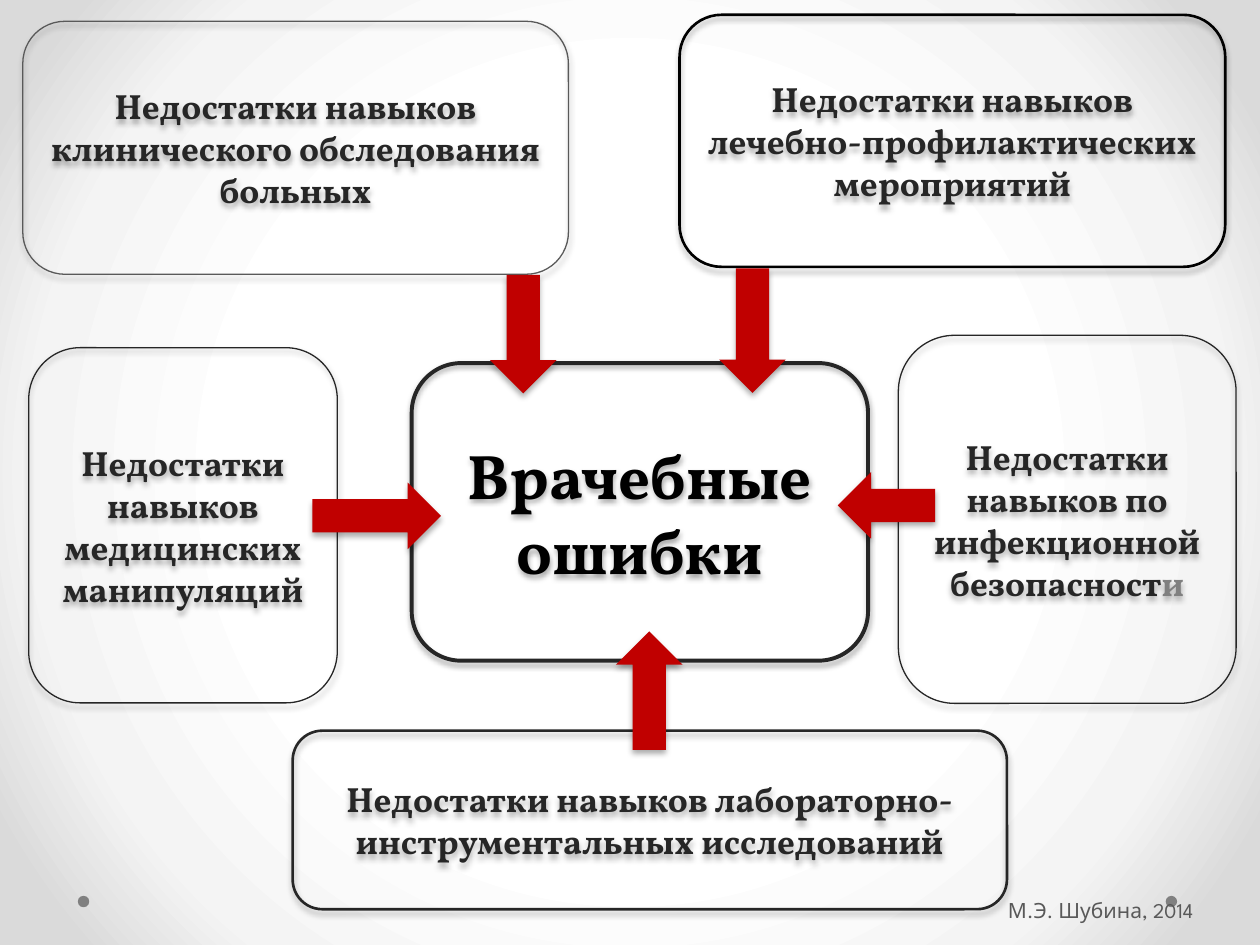
from lxml import etree
from pptx import Presentation
from pptx.dml.color import RGBColor
from pptx.enum.shapes import MSO_SHAPE
from pptx.enum.text import MSO_ANCHOR, PP_ALIGN
from pptx.oxml import parse_xml
from pptx.oxml.ns import nsdecls, qn
from pptx.util import Cm, Pt

ROUNDED = MSO_SHAPE.ROUNDED_RECTANGLE
OVAL = MSO_SHAPE.OVAL
DOWN, UP = MSO_SHAPE.DOWN_ARROW, MSO_SHAPE.UP_ARROW
RIGHT, LEFT = MSO_SHAPE.RIGHT_ARROW, MSO_SHAPE.LEFT_ARROW
MIDDLE = MSO_ANCHOR.MIDDLE
CENTER, ALIGN_LEFT = PP_ALIGN.CENTER, PP_ALIGN.LEFT

THEME = {
    "black": "000000", "dark": "262626", "grey": "595959", "dot": "808080",
    "arrow": "C00000",
    "background": [(0, "FFFFFF"), (50, "FFFFFF"), (76, "F4F4F4"), (92, "DADADA"), (100, "DADADA")],
    "heading_font": "Vollkorn", "body_font": "League Spartan",
    "center_size": 36, "box_size": 20, "credit_size": 12,
    # opacity %, blur pt, distance pt
    "center_shadow": (35, 3.1, 1.8), "shadow": (32, 3.5, 2.2),
}

# Positions are left, top, width, height in centimetres
CENTER_BOX = ("Врачебные ошибки", (8.3, 7.32, 9.2, 6), "dark", 2.25)
CAUSES = [
    ("Недостатки навыков клинического обследования больных", (0.46, 0.43, 11, 5.1), "grey", 0.75),
    ("Недостатки навыков лечебно-профилактических мероприятий", (13.7, 0.3, 11, 5.08), "black", 1.5),
    ("Недостатки навыков лабораторно-инструментальных исследований", (5.9, 14.73, 14.4, 3.6), "dark", 1.5),
    ("Недостатки навыков медицинских манипуляций", (0.58, 7.01, 6.22, 7.16), "dark", 0.75),
    ("Недостатки навыков по инфекционной безопасност", (18.11, 6.76, 6.81, 7.42), "dark", 0.75),
]
GREY_ENDING = "и"  # last letter of the last cause

ARROW_WIDTH = 1.34
# direction, left, top, length
ARROWS = [
    (DOWN, 9.88, 5.54, 2.39),
    (UP, 12.42, 12.73, 2.39),
    (RIGHT, 6.3, 9.73, 2.59),
    (LEFT, 16.89, 9.52, 1.96),
    (DOWN, 14.5, 5.41, 2.51),
]

DOT_SIZE, DOT_TOP, DOT_LEFTS = 0.23, 18.06, (23.5, 1.57)
CREDIT = ("М.Э. Шубина, 2014", (20.09, 17.83, 5.08, 1.02))


def color(name):
    return RGBColor.from_string(THEME[name])


def set_background(slide):
    stops = "".join(
        f'<a:gs pos="{position * 1000}"><a:srgbClr val="{value}"/></a:gs>'
        for position, value in THEME["background"])
    slide.background.fill.solid()
    properties = slide.background._cSld.bg.bgPr
    gradient = parse_xml(
        f'<a:gradFill {nsdecls("a")} rotWithShape="1"><a:gsLst>{stops}</a:gsLst>'
        '<a:path path="circle"><a:fillToRect l="50000" t="50000" r="50000" b="50000"/>'
        '</a:path></a:gradFill>')
    properties.replace(properties.find(qn("a:solidFill")), gradient)


def add_shape(slide, kind, position, fill=None, shadow=None):
    shape = slide.shapes.add_shape(kind, *map(Cm, position))
    shape.line.fill.background()
    if fill:
        shape.fill.solid()
        shape.fill.fore_color.rgb = color(fill)
    else:
        shape.fill.background()
    shape.shadow.inherit = False
    if shadow:
        opacity, blur, distance = THEME[shadow]
        effects = shape._element.spPr.find(qn("a:effectLst"))
        outer = etree.SubElement(
            effects, qn("a:outerShdw"), blurRad=str(Pt(blur)), dist=str(Pt(distance)),
            dir="5400000", rotWithShape="0")
        shade = etree.SubElement(outer, qn("a:srgbClr"), val=THEME["black"])
        etree.SubElement(shade, qn("a:alpha"), val=str(opacity * 1000))
    return shape


def set_text(shape, text, font, size, text_color, bold=False, alignment=CENTER):
    frame = shape.text_frame
    frame.word_wrap = True
    frame.vertical_anchor = MIDDLE
    paragraph = frame.paragraphs[0]
    paragraph.alignment = alignment
    paragraph.font.name = THEME[font]
    paragraph.font.size = Pt(THEME[size])
    paragraph.font.bold = bold
    paragraph.font.color.rgb = color(text_color)
    paragraph.add_run().text = text
    return paragraph


def add_box(slide, box, size, text_color, shadow):
    text, position, line_color, line_width = box
    shape = add_shape(slide, ROUNDED, position, shadow=shadow)
    shape.line.color.rgb = color(line_color)
    shape.line.width = Pt(line_width)
    return set_text(shape, text, "heading_font", size, text_color, bold=True)


def main():
    presentation = Presentation()
    presentation.slide_width, presentation.slide_height = Cm(25.4), Cm(19.05)
    slide = presentation.slides.add_slide(presentation.slide_layouts[6])
    set_background(slide)

    # Decorative dots
    for left in DOT_LEFTS:
        add_shape(slide, OVAL, (left, DOT_TOP, DOT_SIZE, DOT_SIZE), fill="dot")

    # Central topic and its causes
    add_box(slide, CENTER_BOX, "center_size", "black", "center_shadow")
    for cause in CAUSES:
        paragraph = add_box(slide, cause, "box_size", "dark", "shadow")
    ending = paragraph.add_run()
    ending.text = GREY_ENDING
    ending.font.color.rgb = color("dot")

    # Arrows towards the centre
    for direction, left, top, length in ARROWS:
        vertical = direction in (DOWN, UP)
        extent = (ARROW_WIDTH, length) if vertical else (length, ARROW_WIDTH)
        add_shape(slide, direction, (left, top, *extent), fill="arrow", shadow="shadow")

    # Author credit
    text, position = CREDIT
    credit = slide.shapes.add_textbox(*map(Cm, position))
    set_text(credit, text, "body_font", "credit_size", "grey", alignment=ALIGN_LEFT)
    credit.text_frame.margin_left = Cm(0.23)

    presentation.save("out.pptx")


if __name__ == "__main__":
    main()
